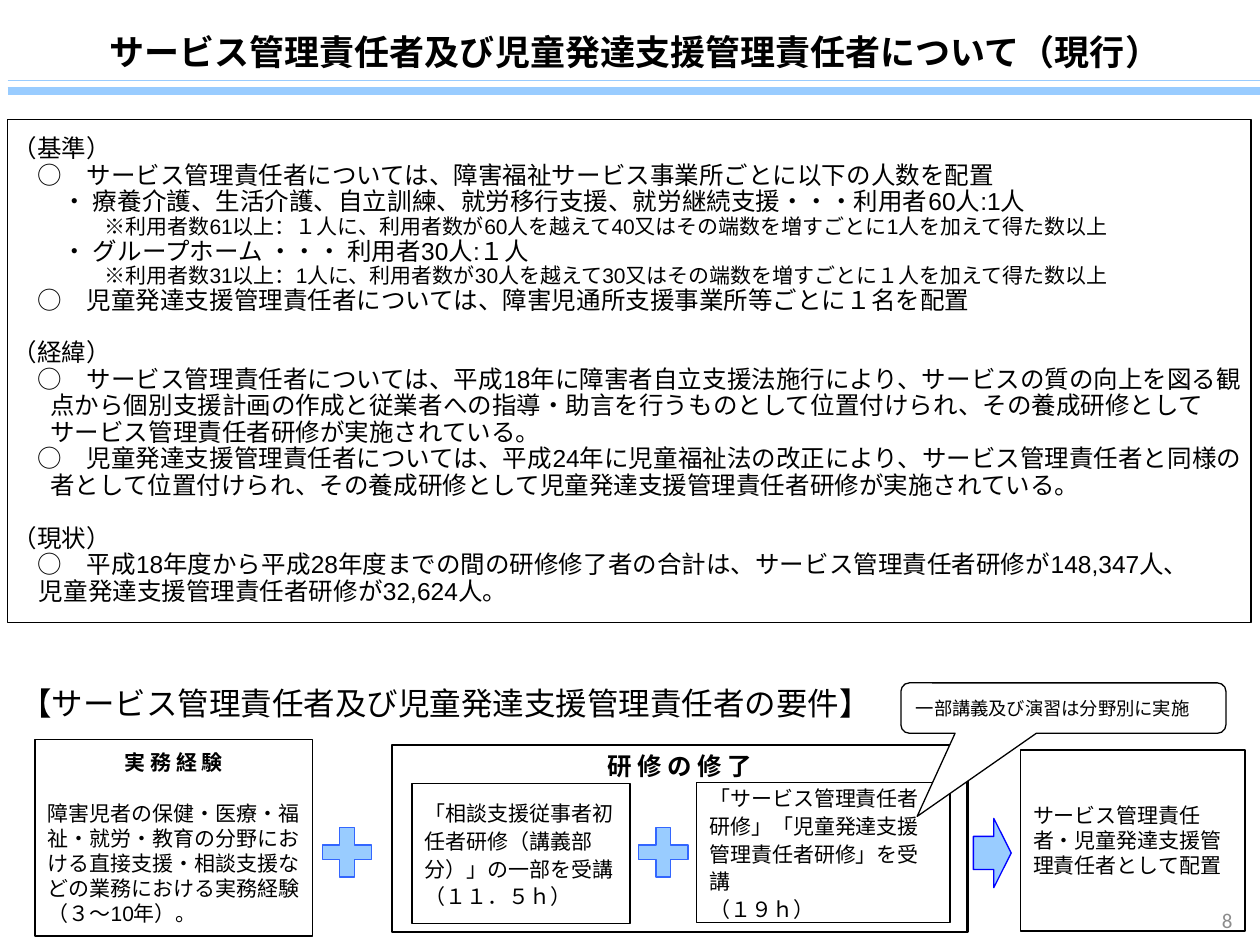
from lxml import etree
from pptx import Presentation
from pptx.dml.color import RGBColor
from pptx.enum import shapes, text
from pptx.oxml import ns
from pptx.util import Inches, Pt

BLACK = RGBColor(0x00, 0x00, 0x00)
WHITE = RGBColor(0xFF, 0xFF, 0xFF)
SKY = RGBColor(0x99, 0xCC, 0xFF)
BLUE = RGBColor(0x33, 0x66, 0xFF)
DEEP_BLUE = RGBColor(0x00, 0x00, 0xFF)
GRAY = RGBColor(0x8C, 0x8C, 0x8C)
KIND = shapes.MSO_SHAPE
LEFT, CENTER, RIGHT = text.PP_ALIGN.LEFT, text.PP_ALIGN.CENTER, text.PP_ALIGN.RIGHT

prs = Presentation()
prs.slide_width, prs.slide_height = Inches(10), Inches(7.5)
slide = prs.slides.add_slide(prs.slide_layouts[6])


def add_box(kind, at, fill=None, line=None, width=0.75, adjust=()):
    box = slide.shapes.add_shape(kind, *map(Inches, at))
    box.shadow.inherit = False
    for color, part in ((fill, box.fill), (line, box.line.fill)):
        if color is None:
            part.background()
        else:
            part.solid()
            part.fore_color.rgb = color
    if line is not None:
        box.line.width = Pt(width)
    for i, value in enumerate(adjust):
        box.adjustments[i] = value
    return box


def write(box, lines, size, font="Arial", color=BLACK, bold=False, align=LEFT,
          spacing=None, insets=(0.1, 0.05), anchor=text.MSO_ANCHOR.MIDDLE):
    frame = box.text_frame
    frame.word_wrap = True
    frame.vertical_anchor = anchor
    frame.margin_left = frame.margin_right = Inches(insets[0])
    frame.margin_top = frame.margin_bottom = Inches(insets[1])
    for i, line in enumerate(lines):
        paragraph = frame.add_paragraph() if i else frame.paragraphs[0]
        paragraph.text = line
        paragraph.alignment = align
        paragraph.line_spacing = spacing
        paragraph.font.size = Pt(size)
        paragraph.font.name = font
        paragraph.font.bold = bold
        paragraph.font.color.rgb = color
    return frame


training = add_box(KIND.RECTANGLE, (3.11, 5.91, 4.57, 1.49), line=BLACK, width=1.25)
write(training, ["研 修 の 修 了"], 14, bold=True, align=CENTER, anchor=text.MSO_ANCHOR.TOP)

for left in (5.07, 2.56):
    add_box(KIND.CROSS, (left, 6.57, 0.39, 0.39), SKY, BLUE, adjust=[0.35])

manager_course = add_box(KIND.RECTANGLE, (5.53, 6.21, 2.01, 1.11), line=BLACK)
write(manager_course, ["「サービス管理責任者", "研修」「児童発達支援", "管理責任者研修」を受講", "（１９ｈ）"],
      12, spacing=1.1)

placement = add_box(KIND.RECTANGLE, (8.1, 5.95, 1.78, 1.44), line=BLACK, width=1)
write(placement, ["サービス管理責任者・児童発達支援管理責任者として配置"], 12)

experience = add_box(KIND.RECTANGLE, (0.28, 5.87, 2.2, 1.56), line=BLACK, width=1)
heading, detail = write(experience, [
    "実 務 経 験",
    "障害児者の保健・医療・福祉・就労・教育の分野における直接支援・相談支援などの業務における実務経験（３～10年）。",
], 12).paragraphs
heading.alignment = CENTER
heading.font.bold = True
detail.space_before = Pt(14.4)

arrow = add_box(KIND.UP_ARROW, (7.6, 6.62, 0.55, 0.3), SKY, DEEP_BLUE, adjust=[0.48, 0.46])
arrow.rotation = 90

consultation_course = add_box(KIND.RECTANGLE, (3.27, 6.22, 1.73, 1.11), line=BLACK)
write(consultation_course, ["「相談支援従事者初任者研修（講義部分）」の一部を受講", "（１１．５ｈ）"], 12, spacing=1.1)

for top, width in ((0.64, 0.75), (0.72, 4.5)):
    rule = slide.shapes.add_connector(shapes.MSO_CONNECTOR.STRAIGHT,
                                      Inches(0.06), Inches(top), Inches(10.06), Inches(top))
    rule.line.color.rgb = SKY
    rule.line.width = Pt(width)
    etree.SubElement(rule._element.spPr, ns.qn("a:effectLst"))

title = slide.shapes.add_textbox(*map(Inches, (0.16, 0.19, 9.76, 0.44)))
write(title, ["サービス管理責任者及び児童発達支援管理責任者について（現行）"], 20, bold=True,
      align=CENTER, anchor=text.MSO_ANCHOR.TOP)

SECTION, POINT, ITEM, NOTE, TAIL = (0, 0), (0.3, -0.1), (0.4, 0), (0.73, 0), (0.21, 0)
overview_lines = [
    (SECTION, "（基準）"),
    (POINT, "○　サービス管理責任者については、障害福祉サービス事業所ごとに以下の人数を配置"),
    (ITEM, "・ 療養介護、生活介護、自立訓練、就労移行支援、就労継続支援・・・利用者60人:1人"),
    (NOTE, "※利用者数61以上：１人に、利用者数が60人を越えて40又はその端数を増すごとに1人を加えて得た数以上"),
    (ITEM, "・ グループホーム ・・・ 利用者30人:１人"),
    (NOTE, "※利用者数31以上：1人に、利用者数が30人を越えて30又はその端数を増すごとに１人を加えて得た数以上"),
    (POINT, "○　児童発達支援管理責任者については、障害児通所支援事業所等ごとに１名を配置"),
    (SECTION, "（経緯）"),
    (POINT, "○　サービス管理責任者については、平成18年に障害者自立支援法施行により、サービスの質の向上を図る"
            "観点から個別支援計画の作成と従業者への指導・助言を行うものとして位置付けられ、その養成研修として"
            "サービス管理責任者研修が実施されている。"),
    (POINT, "○　児童発達支援管理責任者については、平成24年に児童福祉法の改正により、サービス管理責任者と同様"
            "の者として位置付けられ、その養成研修として児童発達支援管理責任者研修が実施されている。"),
    (SECTION, "（現状）"),
    (POINT, "○　平成18年度から平成28年度までの間の研修修了者の合計は、サービス管理責任者研修が148,347人、"),
    (TAIL, "児童発達支援管理責任者研修が32,624人。"),
]
overview = add_box(KIND.RECTANGLE, (0.06, 0.95, 9.87, 3.99), WHITE, BLACK)
overview_text = write(overview, [line for _, line in overview_lines], 14, spacing=0.9, insets=(0.04, 0.01))
for i, (level, _) in enumerate(overview_lines):
    paragraph = overview_text.paragraphs[i]
    margin, indent = level
    properties = paragraph._p.get_or_add_pPr()
    properties.set("marL", str(Inches(margin)))
    properties.set("indent", str(Inches(indent)))
    if level == NOTE:
        paragraph.font.size = Pt(12)
    if level == SECTION and i:
        paragraph.space_before = Pt(15)

requirements = add_box(KIND.RECTANGLE, (0.12, 5.42, 7.94, 0.39), WHITE)
write(requirements, ["【サービス管理責任者及び児童発達支援管理責任者の要件】"], 18, "Calibri",
      insets=(0.04, 0.01), anchor=text.MSO_ANCHOR.TOP)

callout = add_box(KIND.ROUNDED_RECTANGULAR_CALLOUT, (7.15, 5.42, 2.58, 0.4), WHITE, BLACK,
                  adjust=[-0.45, 2.15, 0.17])
write(callout, ["一部講義及び演習は分野別に実施"], 10.5, "Calibri")

page_number = slide.shapes.add_textbox(*map(Inches, (7.55, 7.1, 2.33, 0.4)))
write(page_number, ["8"], 12, "Calibri", GRAY, align=RIGHT)

prs.save("out.pptx")
